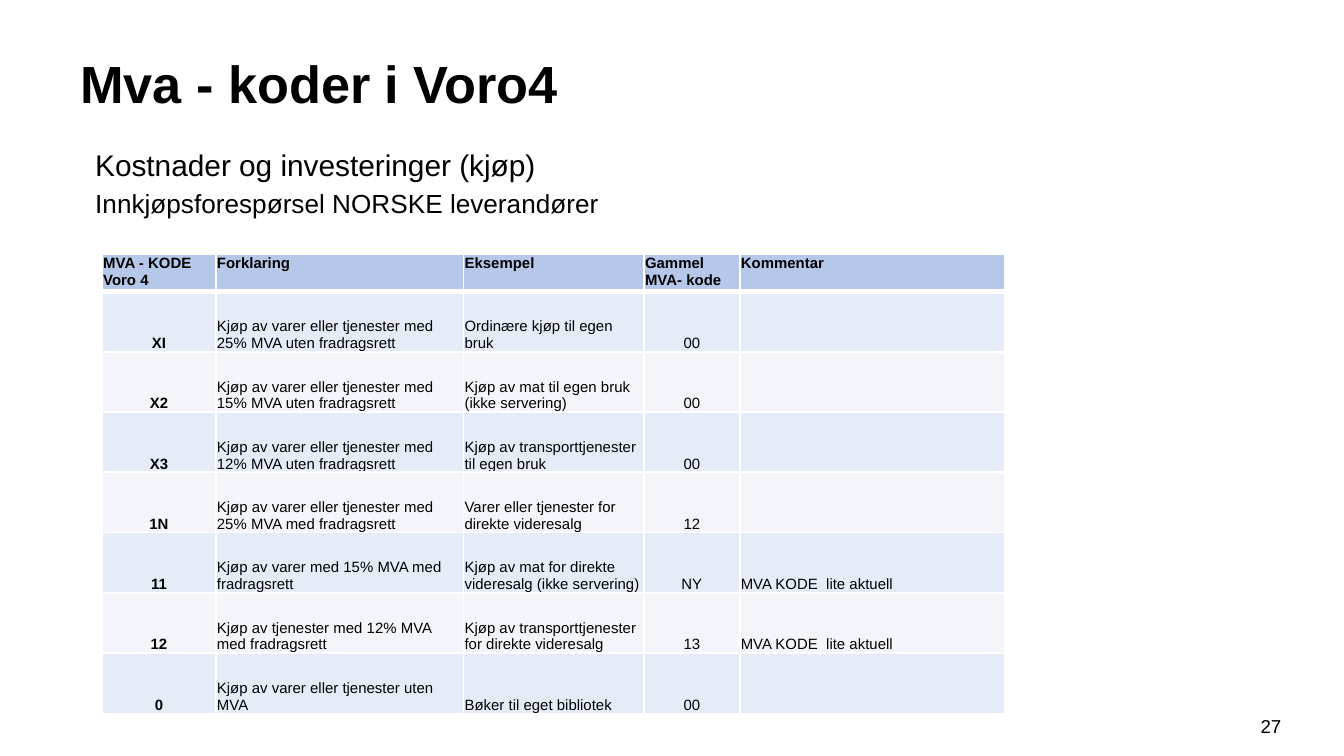
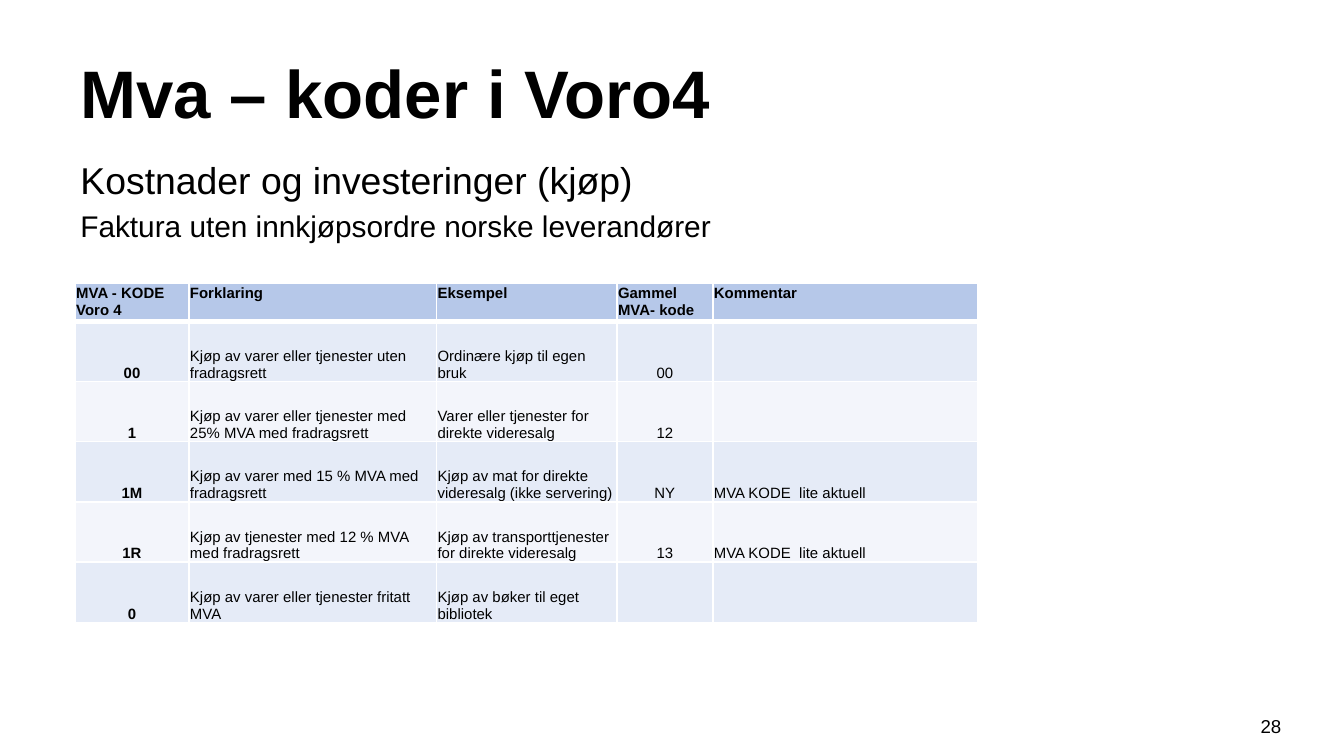
import pptx
import pptx.dml.color
import pptx.enum.text
import pptx.oxml
import pptx.oxml.ns
import pptx.util

Cm, Pt = pptx.util.Cm, pptx.util.Pt
RGB = pptx.dml.color.RGBColor
ALIGN = pptx.enum.text.PP_ALIGN
ANCHOR = pptx.enum.text.MSO_ANCHOR

COLORS = {"text": "000000", "header": "B6C8E9", "odd": "E5EBF7",
          "even": "F3F5FB", "border": "FFFFFF"}
FONT = "Arial"

COL_WIDTHS = [2.15, 4.68, 3.41, 1.81, 5.01]
CENTERED_COLS = (0, 3)
HEADER_HEIGHT, ROW_HEIGHT = 0.71, 1.14
HEADERS = ["MVA - KODE Voro 4", "Forklaring", "Eksempel",
           "Gammel MVA- kode", "Kommentar"]

SUBTITLE = "Kostnader og investeringer (kjøp)"
OWN_USE = "Ordinære kjøp til egen bruk"
RESALE = "Varer eller tjenester for direkte videresalg"
FOOD_RESALE = "Kjøp av mat for direkte videresalg (ikke servering)"
TRANSPORT_RESALE = "Kjøp av transporttjenester for direkte videresalg"
DEDUCTIBLE_25 = "Kjøp av varer eller tjenester med 25% MVA med fradragsrett"
RARE = "MVA KODE  lite aktuell"

PURCHASE_ROWS = [
    ["XI", "Kjøp av varer eller tjenester med 25% MVA uten fradragsrett",
     OWN_USE, "00", ""],
    ["X2", "Kjøp av varer eller tjenester med 15% MVA uten fradragsrett",
     "Kjøp av mat til egen bruk (ikke servering)", "00", ""],
    ["X3", "Kjøp av varer eller tjenester med 12% MVA uten fradragsrett",
     "Kjøp av transporttjenester til egen bruk", "00", ""],
    ["1N", DEDUCTIBLE_25, RESALE, "12", ""],
    ["11", "Kjøp av varer med 15% MVA med fradragsrett", FOOD_RESALE, "NY", RARE],
    ["12", "Kjøp av tjenester med 12% MVA med fradragsrett",
     TRANSPORT_RESALE, "13", RARE],
    ["0", "Kjøp av varer eller tjenester uten MVA",
     "Bøker til eget bibliotek", "00", ""],
]
INVOICE_ROWS = [
    ["00", "Kjøp av varer eller tjenester uten fradragsrett", OWN_USE, "00", ""],
    ["1", DEDUCTIBLE_25, RESALE, "12", ""],
    ["1M", "Kjøp av varer med 15 % MVA med fradragsrett", FOOD_RESALE, "NY", RARE],
    ["1R", "Kjøp av tjenester med 12 % MVA med fradragsrett",
     TRANSPORT_RESALE, "13", RARE],
    ["0", "Kjøp av varer eller tjenester fritatt MVA",
     "Kjøp av bøker til eget bibliotek", "", ""],
]


def write(p, text, size, bold=False, align=ALIGN.LEFT, before=0):
    """Fill a paragraph with one formatted run."""
    p.alignment = align
    if before:
        p.space_before = Pt(before)
    r = p.add_run()
    r.text = text
    r.font.name, r.font.size, r.font.bold = FONT, Pt(size), bold
    r.font.color.rgb = RGB.from_string(COLORS["text"])


def add_box(s, box):
    """Add a wrapping text box and return its text frame."""
    tf = s.shapes.add_textbox(*map(Cm, box)).text_frame
    tf.word_wrap = True
    return tf


def add_title(s, box, text, size):
    write(add_box(s, box).paragraphs[0], text, size, bold=True)


def add_intro(s, box, text, sizes):
    tf = add_box(s, box)
    write(tf.paragraphs[0], SUBTITLE, sizes[0])
    write(tf.add_paragraph(), text, sizes[1], before=0.2 * sizes[1])


def add_page_number(s, number):
    tf = add_box(s, (23.55, 13.39, 0.94, 0.76))
    tf.word_wrap = False
    write(tf.paragraphs[0], str(number), 10, align=ALIGN.CENTER)


def set_borders(cell, top, bottom):
    """Draw the four cell edges; top and bottom widths are in points."""
    tc_pr = cell._tc.get_or_add_tcPr()
    for edge, width in (("L", 1), ("R", 1), ("T", top), ("B", bottom)):
        tc_pr.append(pptx.oxml.parse_xml(
            f'<a:ln{edge} {pptx.oxml.ns.nsdecls("a")} w="{Pt(width)}">'
            f'<a:solidFill><a:srgbClr val="{COLORS["border"]}"/></a:solidFill>'
            f'</a:ln{edge}>'))


def format_cell(cell, text, row, col):
    is_header = row == 0
    cell.margin_left = cell.margin_right = cell.margin_top = Cm(0.02)
    cell.margin_bottom = 0
    cell.vertical_anchor = ANCHOR.TOP if is_header else ANCHOR.BOTTOM
    set_borders(cell, top=3 if row == 1 else 1, bottom=3 if is_header else 1)
    fill = "header" if is_header else "odd" if row % 2 else "even"
    cell.fill.solid()
    cell.fill.fore_color.rgb = RGB.from_string(COLORS[fill])
    if text:
        centered = not is_header and col in CENTERED_COLS
        write(cell.text_frame.paragraphs[0], text, 8,
              bold=is_header or col == 0,
              align=ALIGN.CENTER if centered else ALIGN.LEFT)


def add_code_table(s, left, top, rows):
    height = HEADER_HEIGHT + ROW_HEIGHT * len(rows)
    table = s.shapes.add_table(len(rows) + 1, len(HEADERS), Cm(left), Cm(top),
                               Cm(sum(COL_WIDTHS)), Cm(height)).table
    for col, width in enumerate(COL_WIDTHS):
        table.columns[col].width = Cm(width)
    for row, texts in enumerate([HEADERS] + rows):
        table.rows[row].height = Cm(ROW_HEIGHT if row else HEADER_HEIGHT)
        for col, text in enumerate(texts):
            format_cell(table.cell(row, col), text, row, col)


def add_code_slide(prs, number, title, title_size, title_height,
                   intro, intro_box, intro_sizes, table_at, rows):
    s = prs.slides.add_slide(prs.slide_layouts[6])
    add_page_number(s, number)
    add_title(s, (1.27, 0.84, 21.16, title_height), title, title_size)
    add_intro(s, intro_box, intro, intro_sizes)
    add_code_table(s, *table_at, rows)


def main():
    prs = pptx.Presentation()
    prs.slide_width, prs.slide_height = Cm(25.4), Cm(14.29)
    add_code_slide(prs, 27, "Mva - koder i Voro4", 28, 1.45,
                   "Innkjøpsforespørsel NORSKE leverandører",
                   (1.55, 2.64, 17.15, 10.52), (16, 14),
                   (1.93, 4.8), PURCHASE_ROWS)
    add_code_slide(prs, 28, "Mva – koder i Voro4", 36, 1.8,
                   "Faktura uten innkjøpsordre norske leverandører",
                   (1.27, 2.84, 22.86, 10.54), (20, 16),
                   (1.42, 5.36), INVOICE_ROWS)
    prs.save("out.pptx")


if __name__ == "__main__":
    main()
